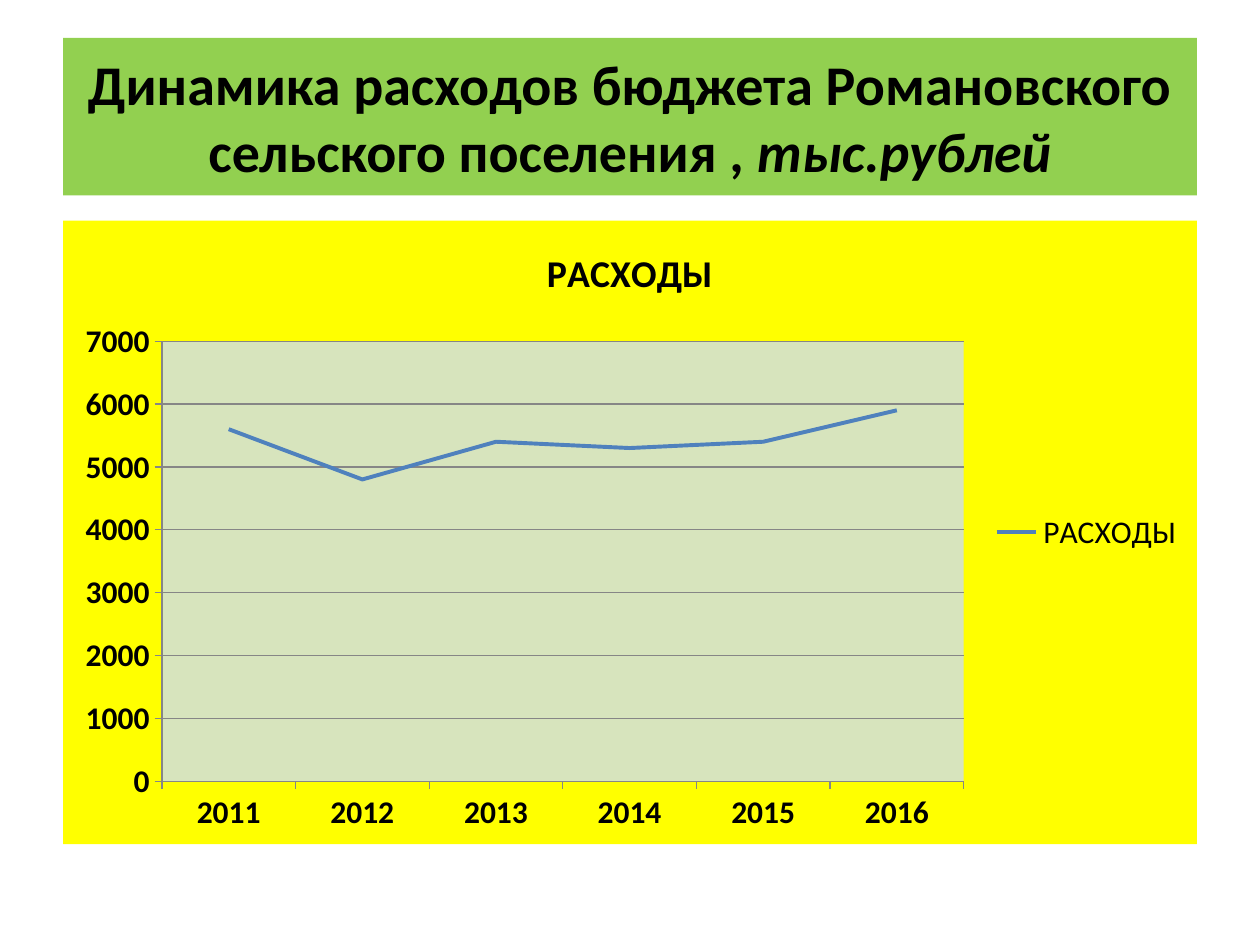
from dataclasses import dataclass

from lxml.etree import SubElement
from pptx import Presentation
from pptx.chart.data import CategoryChartData
from pptx.dml.color import RGBColor
from pptx.enum.chart import XL_CHART_TYPE as ChartType
from pptx.enum.chart import XL_LEGEND_POSITION as LegendPos
from pptx.enum.chart import XL_TICK_MARK as TickMark
from pptx.enum.text import MSO_ANCHOR as Anchor
from pptx.enum.text import PP_ALIGN as Align
from pptx.oxml import parse_xml
from pptx.oxml.ns import nsdecls, qn
from pptx.util import Pt

TITLE_RUNS = [
    ("Динамика расходов бюджета Романовского сельского поселения , ", False),
    ("тыс.рублей", True),
]
SERIES_NAME = "РАСХОДЫ"
EXPENSES = {
    "2011": 5600,
    "2012": 4800,
    "2013": 5400,
    "2014": 5300,
    "2015": 5400,
    "2016": 5900,
}

SLIDE_W, SLIDE_H = 720, 540
MARGIN = 36
CONTENT_W = SLIDE_W - 2 * MARGIN
TITLE_TOP, TITLE_H = 21.6, 90
CHART_TOP, CHART_H = 126, 356.4


@dataclass(frozen=True)
class Theme:
    font: str = "Calibri"
    text: str = "000000"
    title_fill: str = "92D050"
    chart_fill: str = "FFFF00"
    plot_fill: str = "D7E4BD"
    line: str = "4F81BD"
    axis: str = "868686"
    title_size: float = 32
    chart_title_size: float = 21.6
    chart_size: float = 18


THEME = Theme()


def rgb(color):
    return RGBColor.from_string(color)


def style_font(font, size, bold, italic=False):
    font.name, font.size = THEME.font, Pt(size)
    font.bold, font.italic = bold, italic
    font.color.rgb = rgb(THEME.text)


def area_fill(color):
    """Return chart shape properties with a solid fill and no outline."""
    return parse_xml(
        f'<c:spPr {nsdecls("c", "a")}><a:solidFill><a:srgbClr val="{color}"/>'
        "</a:solidFill><a:ln><a:noFill/></a:ln></c:spPr>"
    )


def add_title(slide):
    sp = slide.shapes.title
    sp.left, sp.top = Pt(MARGIN), Pt(TITLE_TOP)
    sp.width, sp.height = Pt(CONTENT_W), Pt(TITLE_H)
    sp.fill.solid()
    sp.fill.fore_color.rgb = rgb(THEME.title_fill)
    tf = sp.text_frame
    tf.word_wrap, tf.vertical_anchor = True, Anchor.MIDDLE
    p = tf.paragraphs[0]
    p.alignment = Align.CENTER
    for text, italic in TITLE_RUNS:
        r = p.add_run()
        r.text = text
        style_font(r.font, THEME.title_size, True, italic)


def style_axis(axis):
    axis.major_tick_mark, axis.minor_tick_mark = TickMark.OUTSIDE, TickMark.NONE
    axis.format.line.color.rgb = rgb(THEME.axis)
    style_font(axis.tick_labels.font, THEME.chart_size, True)


def add_expense_chart(slide):
    data = CategoryChartData()
    data.categories = list(EXPENSES)
    data.add_series(SERIES_NAME, list(EXPENSES.values()))
    chart = slide.shapes.add_chart(
        ChartType.LINE_STACKED,
        Pt(MARGIN), Pt(CHART_TOP), Pt(CONTENT_W), Pt(CHART_H), data,
    ).chart
    style_font(chart.font, THEME.chart_size, False)

    chart.has_title = True
    r = chart.chart_title.text_frame.paragraphs[0].add_run()
    r.text = SERIES_NAME
    style_font(r.font, THEME.chart_title_size, True)
    chart.chart_title.include_in_layout = False

    chart.has_legend = True
    chart.legend.position = LegendPos.RIGHT
    chart.legend.include_in_layout = False
    style_font(chart.legend.font, THEME.chart_size, False)

    for axis in (chart.category_axis, chart.value_axis):
        style_axis(axis)
    values = chart.value_axis
    values.minimum_scale, values.maximum_scale, values.major_unit = 0, 7000, 1000
    values.has_major_gridlines = True
    values.major_gridlines.format.line.color.rgb = rgb(THEME.axis)

    plot = chart.plots[0]
    plot.vary_by_categories = False
    series = plot.series[0]
    series.smooth = False
    series.format.line.color.rgb = rgb(THEME.line)
    series.format.line.width = Pt(2.25)

    space = chart.element
    space.find(qn("c:txPr")).addprevious(area_fill(THEME.chart_fill))
    space.find(f'{qn("c:chart")}/{qn("c:plotArea")}').append(area_fill(THEME.plot_fill))
    if space.find(qn("c:roundedCorners")) is None:
        corners = SubElement(space, qn("c:roundedCorners"), val="0")
        space.find(qn("c:chart")).addprevious(corners)


def main():
    prs = Presentation()
    prs.slide_width, prs.slide_height = Pt(SLIDE_W), Pt(SLIDE_H)
    slide = prs.slides.add_slide(prs.slide_layouts[5])
    add_title(slide)
    add_expense_chart(slide)
    prs.save("out.pptx")


if __name__ == "__main__":
    main()
